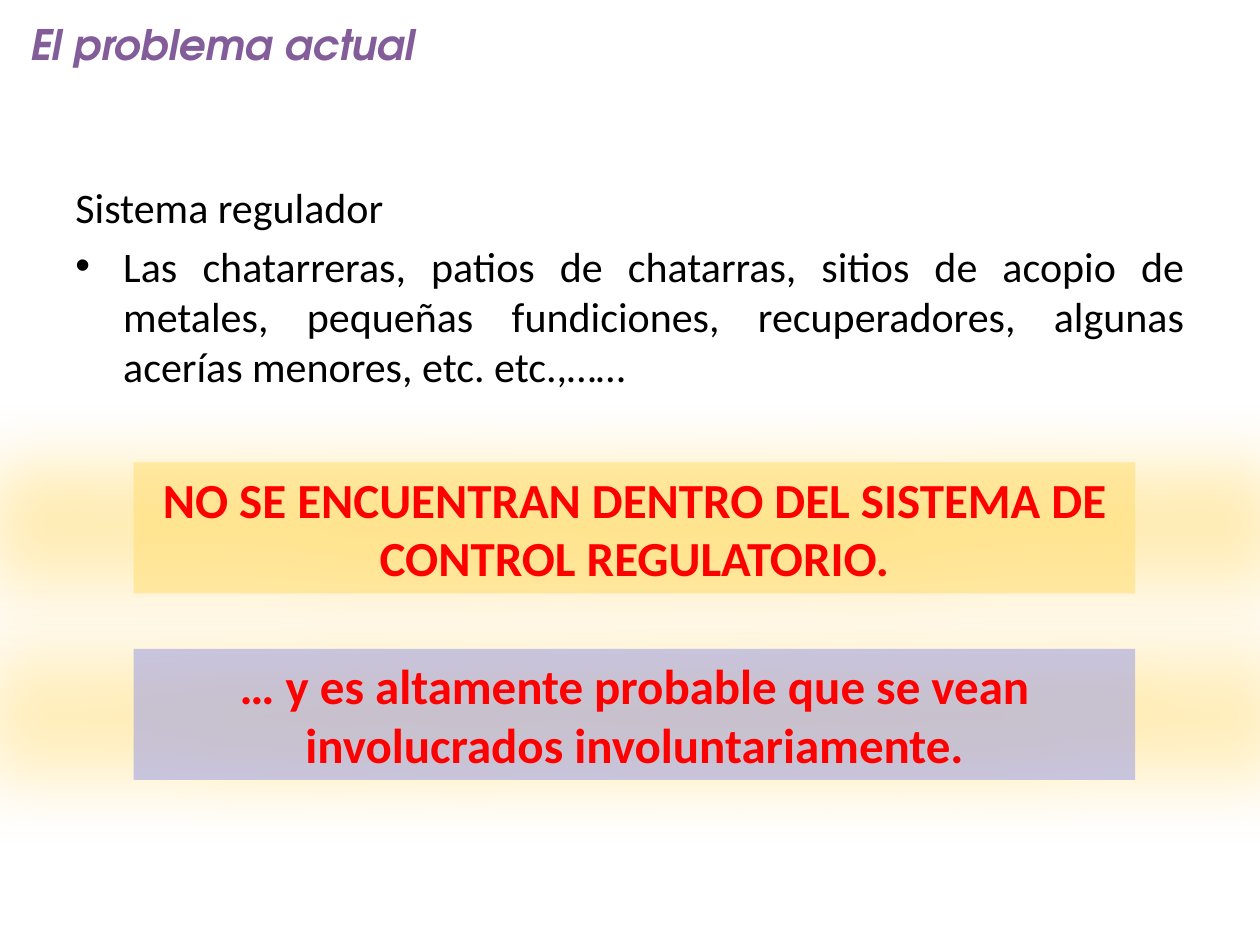
from lxml import etree
from pptx import Presentation
from pptx.dml.color import RGBColor
from pptx.enum.shapes import MSO_SHAPE
from pptx.enum.text import MSO_ANCHOR, MSO_AUTO_SIZE, PP_ALIGN
from pptx.oxml.ns import qn
from pptx.util import Inches, Pt

RECTANGLE = MSO_SHAPE.RECTANGLE
MIDDLE = MSO_ANCHOR.MIDDLE
NO_AUTOFIT = MSO_AUTO_SIZE.NONE
CENTER, LEFT, JUSTIFY = PP_ALIGN.CENTER, PP_ALIGN.LEFT, PP_ALIGN.JUSTIFY

TITLE = "El problema actual"
BODY = [
    ("Sistema regulador", LEFT, False),
    (
        "Las chatarreras, patios de chatarras, sitios de acopio de metales, "
        "pequeñas fundiciones, recuperadores, algunas acerías menores, etc. etc.,……",
        JUSTIFY,
        True,
    ),
]
WARNINGS = [
    ("NO SE ENCUENTRAN DENTRO DEL SISTEMA DE CONTROL REGULATORIO.", "FFDF79"),
    ("… y es altamente probable que se vean involucrados involuntariamente.", "A3A3E0"),
]

WIDTH, HEIGHT = 10, 7.5
WARNING_LEFT, WARNING_TOP = 1.06, 3.67
WARNING_WIDTH, WARNING_HEIGHT = 7.95, 1.04
WARNING_PITCH = 1.48
INDENT = 0.38


def color(value):
    return RGBColor.from_string(value)


def place(shape, left, top, width, height):
    shape.left, shape.top = Inches(left), Inches(top)
    shape.width, shape.height = Inches(width), Inches(height)


def style(paragraph, name, size, value, bold=False, italic=False):
    font = paragraph.font
    font.name, font.size = name, Pt(size)
    font.color.rgb = color(value)
    font.bold, font.italic = bold, italic


def add_child(parent, tag, **attributes):
    child = etree.SubElement(parent, qn(tag))
    for key, value in attributes.items():
        child.set(key, str(value))
    return child


def add_alpha(parent, percent):
    add_child(parent, "a:alpha", val=percent * 1000)


def add_glow(shape):
    effects = add_child(shape._element.spPr, "a:effectLst")
    shadow = add_child(
        effects, "a:outerShdw", blurRad=Pt(41), dist=0, dir=5400000,
        sx=130000, sy=100000, algn="ctr", rotWithShape=0,
    )
    add_alpha(add_child(shadow, "a:srgbClr", val="FFC000"), 44)


def add_title(slide):
    title = slide.shapes.title
    place(title, -0.05, 0, 3.63, 1.07)
    frame = title.text_frame
    frame.text = TITLE
    frame.auto_size = NO_AUTOFIT
    frame.vertical_anchor = MIDDLE
    frame.margin_bottom = Inches(0.42)
    paragraph = frame.paragraphs[0]
    paragraph.alignment = CENTER
    style(paragraph, "TeX Gyre Adventor", 24, "835C9A", True, True)


def add_body(slide):
    box = slide.shapes.add_textbox(Inches(0.5), Inches(1.39), Inches(9), Inches(4.95))
    frame = box.text_frame
    frame.word_wrap = True
    for index, (text, alignment, bulleted) in enumerate(BODY):
        paragraph = frame.add_paragraph() if index else frame.paragraphs[0]
        paragraph.text = text
        paragraph.alignment = alignment
        if index:
            paragraph.space_before = Pt(4.8)
        properties = paragraph._p.get_or_add_pPr()
        properties.set("marL", str(Inches(INDENT)))
        properties.set("indent", str(-Inches(INDENT)))
        if bulleted:
            add_child(properties, "a:buFont", typeface="Arial")
            add_child(properties, "a:buChar", char="•")
        style(paragraph, "Calibri", 24, "000000")


def add_warning(slide, row, text, fill):
    shape = slide.shapes.add_shape(RECTANGLE, 0, 0, 0, 0)
    place(shape, WARNING_LEFT, WARNING_TOP + row * WARNING_PITCH, WARNING_WIDTH, WARNING_HEIGHT)
    shape.fill.solid()
    shape.fill.fore_color.rgb = color(fill)
    add_alpha(shape._element.spPr.find(qn("a:solidFill"))[0], 59)
    shape.line.fill.background()
    add_glow(shape)
    frame = shape.text_frame
    frame.word_wrap = True
    frame.vertical_anchor = MIDDLE
    frame.text = text
    paragraph = frame.paragraphs[0]
    paragraph.alignment = CENTER
    style(paragraph, "Calibri", 28, "FF0000", True)


def main():
    presentation = Presentation()
    presentation.slide_width, presentation.slide_height = Inches(WIDTH), Inches(HEIGHT)
    slide = presentation.slides.add_slide(presentation.slide_layouts[5])
    add_title(slide)
    add_body(slide)
    for row, (text, fill) in enumerate(WARNINGS):
        add_warning(slide, row, text, fill)
    presentation.save("out.pptx")


if __name__ == "__main__":
    main()
